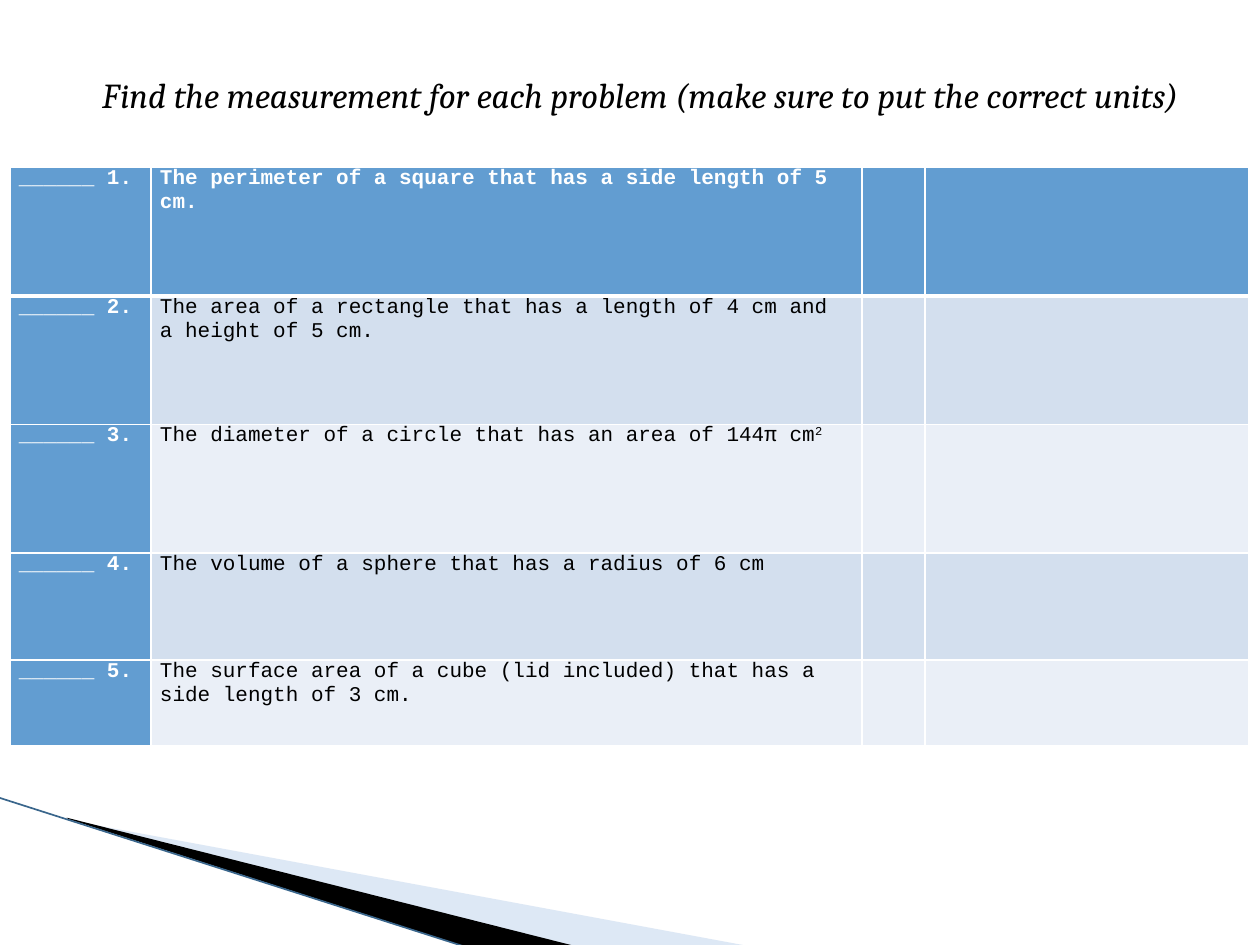
from pptx import Presentation
from pptx.dml.color import RGBColor
from pptx.enum.shapes import MSO_CONNECTOR
from pptx.enum.text import MSO_ANCHOR, MSO_AUTO_SIZE, PP_ALIGN
from pptx.oxml.ns import qn
from pptx.util import Inches, Pt
from lxml.etree import SubElement

BLUE, WHITE, BLACK = "629DD1", "FFFFFF", "000000"
BANDS = ["EAEFF7", "D3DFEE"]
COLS = [1.12, 5.64, 0.5, 2.57]
ROWS = [1.02, 1.02, 1.02, 0.85, 0.68]
TASKS = [
    ("The perimeter of a square that has a side length of 5 cm.", ""),
    ("The area of a rectangle that has a length of 4 cm and a height of 5 cm.", ""),
    ("The diameter of a circle that has an area of 144π cm", "2"),
    ("The volume of a sphere that has a radius of 6 cm", ""),
    ("The surface area of a cube (lid included) that has a side length of 3 cm.", ""),
]


def color(code):
    return RGBColor.from_string(code)


def style(font, name, size, code, bold=False, italic=False):
    font.name, font.size = name, Pt(size)
    font.bold, font.italic = bold, italic
    font.color.rgb = color(code)


def wedge(slide, points, code, alpha=None):
    spots = [(Inches(x), Inches(y)) for x, y in points]
    build = slide.shapes.build_freeform(*spots[0])
    build.add_line_segments(spots[1:], close=True)
    shape = build.convert_to_shape()
    shape.shadow.inherit = False
    shape.fill.solid()
    shape.fill.fore_color.rgb = color(code)
    shape.line.fill.background()
    if alpha:
        tint = shape.fill._xPr.find(".//" + qn("a:srgbClr"))
        SubElement(tint, qn("a:alpha"), val=str(alpha * 1000))


def decor(slide, x, y):
    pale = [(0.56, 0.18), (5.96, 1.18), (4.57, 1.18), (0.56, 0.17)]
    dark = [(0.54, 0.16), (4.58, 1.18), (3.73, 1.19), (0.55, 0.17)]
    for points, code, alpha in [(pale, "ABC6E6", 40), (dark, BLACK, None)]:
        wedge(slide, [(x + a, y + b) for a, b in points], code, alpha)
    line = slide.shapes.add_connector(
        MSO_CONNECTOR.STRAIGHT, Inches(x), Inches(y), Inches(x + 3.72), Inches(y + 1.19))
    line.line.width = Pt(0.95)
    line.line.color.rgb = color("3A668C")
    SubElement(line._element.spPr, qn("a:effectLst"))


def edges(cell, base):
    props = cell._tc.get_or_add_tcPr()
    for side, width in [("L", 1), ("R", 1), ("T", 1), ("B", base)]:
        edge = SubElement(props, qn("a:ln" + side), w=str(Pt(width)))
        fill = SubElement(edge, qn("a:solidFill"))
        SubElement(fill, qn("a:srgbClr"), val=WHITE)


def write(cell, text, power, code, bold):
    cell.margin_left = cell.margin_right = Inches(0.07)
    cell.margin_top = cell.margin_bottom = 0
    para = cell.text_frame.paragraphs[0]
    para.text = text
    if power:
        run = para.add_run()
        run.text = power
        run.font._element.set("baseline", "30000")
    for run in para.runs:
        style(run.font, "Courier New", 12, code, bold)


def grid(slide, x, y, w, h):
    table = slide.shapes.add_table(
        len(ROWS), len(COLS), Inches(x), Inches(y), Inches(w), Inches(h)).table
    for col, width in zip(table.columns, COLS):
        col.width = Inches(width)
    for i, (height, (text, power)) in enumerate(zip(ROWS, TASKS)):
        table.rows[i].height = Inches(height)
        for j, cell in enumerate(table.rows[i].cells):
            head = i == 0 or j == 0
            edges(cell, 3 if i == 0 else 1)
            cell.fill.solid()
            cell.fill.fore_color.rgb = color(BLUE if head else BANDS[i % 2])
            if j == 0:
                write(cell, f"______ {i + 1}.", "", WHITE, True)
            elif j == 1:
                write(cell, text, power, WHITE if head else BLACK, head)


def title(slide, x, y, w, h):
    frame = slide.shapes.add_textbox(Inches(x), Inches(y), Inches(w), Inches(h)).text_frame
    frame.word_wrap = False
    frame.auto_size = MSO_AUTO_SIZE.SHAPE_TO_FIT_TEXT
    frame.vertical_anchor = MSO_ANCHOR.MIDDLE
    para = frame.paragraphs[0]
    para.text = "Find the measurement for each problem (make sure to put the correct units)"
    para.alignment = PP_ALIGN.CENTER
    style(para.runs[0].font, "Cambria", 20, BLACK, italic=True)


def main():
    deck = Presentation()
    deck.slide_width, deck.slide_height = Inches(10), Inches(7.5)
    slide = deck.slides.add_slide(deck.slide_layouts[6])
    decor(slide, -0.01, 6.33)
    grid(slide, 0.08, 1.33, sum(COLS), sum(ROWS))
    title(slide, 0.57, 0.53, 9.03, 0.44)
    deck.save("out.pptx")


if __name__ == "__main__":
    main()
